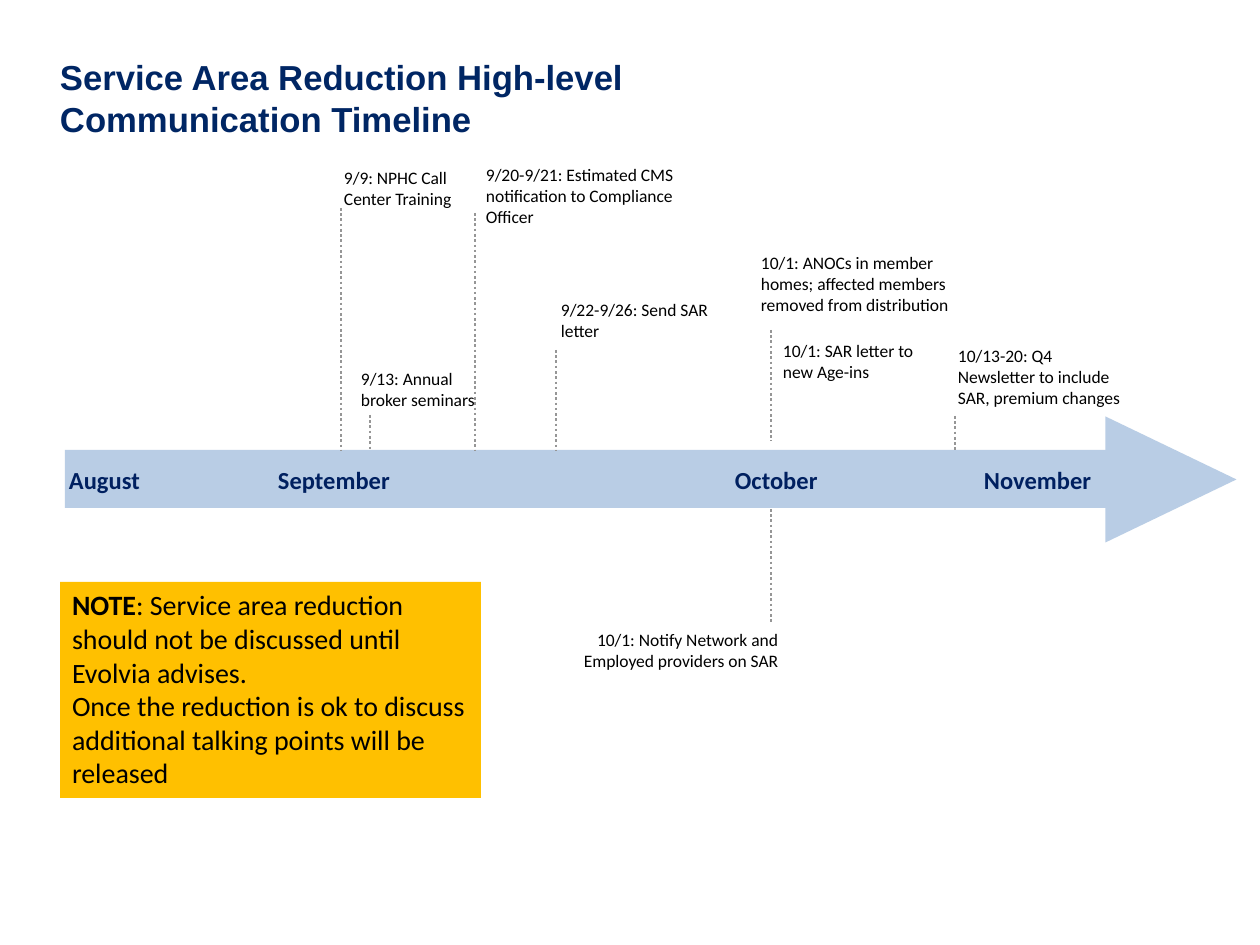
from dataclasses import dataclass

from lxml import etree
from pptx import Presentation, util as u
from pptx.dml.color import RGBColor
from pptx.enum import dml, shapes, text
from pptx.oxml import ns

EMU_PER_PX = 914400 // 126


@dataclass(frozen=True)
class Theme:
    title: RGBColor = RGBColor(0x00, 0x26, 0x64)
    month: RGBColor = RGBColor(0x00, 0x20, 0x60)
    body: RGBColor = RGBColor(0x00, 0x00, 0x00)
    arrow: RGBColor = RGBColor(0xB9, 0xCD, 0xE5)
    marker: RGBColor = RGBColor(0x96, 0x96, 0x96)
    note: RGBColor = RGBColor(0xFF, 0xC0, 0x00)
    heading_font: str = "Arial"
    body_font: str = "Calibri"
    title_size: float = 19.8
    title_leading: int = 24
    month_size: int = 14
    event_size: int = 10
    note_size: int = 16
    marker_width: float = 1.5


THEME = Theme()

# Month name and the left edge of its label
MONTHS = [("August", 69), ("September", 278), ("October", 735), ("November", 984)]

# Text, left, top, width, height of each event above the arrow
EVENTS_ABOVE = [
    ("9/9: NPHC Call Center Training", 331, 158, 146, 88),
    ("9/22-9/26: Send SAR letter", 548, 290, 212, 40),
    ("9/20-9/21: Estimated CMS notification to Compliance Officer", 473, 155, 213, 87),
    ("9/13: Annual broker seminars", 348, 359, 154, 66),
    ("10/1: ANOCs in member homes; affected members removed from distribution",
     748, 243, 229, 87),
    ("10/13-20: Q4 Newsletter to include SAR, premium changes", 945, 336, 189, 74),
    ("10/1: SAR letter to new Age-ins", 770, 331, 165, 87),
]
EVENT_BELOW = ("10/1: Notify Network and Employed providers on SAR", 539, 620, 252, 74)

# x, top, bottom of each dotted marker
MARKERS = [(341, 208, 450), (475, 213, 450), (556, 350, 450), (771, 330, 441),
           (771, 509, 622), (370, 415, 450), (955, 416, 450)]

NOTE = [
    [("NOTE", True),
     (": Service area reduction should not be discussed until Evolvia advises.", False)],
    [("Once the reduction is ok to discuss additional talking points will be released",
      False)],
]


def px(*lengths):
    return [u.Emu(length * EMU_PER_PX) for length in lengths]


def set_font(paragraph, name, size, color, bold=None):
    font = paragraph.font
    font.name, font.size, font.bold = name, u.Pt(size), bold
    font.color.rgb = color


def set_margins(frame, *insets):
    (frame.margin_left, frame.margin_top,
     frame.margin_right, frame.margin_bottom) = px(*insets)


def add_text(slide, content, box, insets=(0, 0, 0, 0)):
    """Add a wrapping text box and return its frame."""
    frame = slide.shapes.add_textbox(*px(*box)).text_frame
    frame.word_wrap = True
    set_margins(frame, *insets)
    frame.text = content
    return frame


def add_block(slide, preset, box, color):
    block = slide.shapes.add_shape(preset, *px(*box))
    block.shadow.inherit = False
    block.fill.solid()
    block.fill.fore_color.rgb = color
    block.line.fill.background()
    return block


def add_title(slide):
    title = add_text(slide, "Service Area Reduction High-level\vCommunication Timeline",
                     (60, 55, 1150, 90)).paragraphs[0]
    title.line_spacing = u.Pt(THEME.title_leading)
    set_font(title, THEME.heading_font, THEME.title_size, THEME.title, True)


def add_arrow(slide):
    add_block(slide, shapes.MSO_SHAPE.RECTANGLE, (65, 450, 1054, 58), THEME.arrow)
    head = add_block(slide, shapes.MSO_SHAPE.FLOWCHART_EXTRACT,
                     (1108, 414, 126, 131), THEME.arrow)
    head.rotation = 90


def add_months(slide):
    names, lefts = zip(*MONTHS)
    frame = add_text(slide, "\t".join(names), (lefts[0], 450, 1100, 59))
    frame.vertical_anchor = text.MSO_ANCHOR.MIDDLE
    months = frame.paragraphs[0]
    stops = etree.SubElement(months._p.get_or_add_pPr(), ns.qn("a:tabLst"))
    for left in lefts[1:]:
        etree.SubElement(stops, ns.qn("a:tab"),
                         pos=str((left - lefts[0]) * EMU_PER_PX), algn="l")
    set_font(months, THEME.body_font, THEME.month_size, THEME.month, True)


def add_marker(slide, x, top, bottom):
    marker = slide.shapes.add_connector(
        shapes.MSO_CONNECTOR.STRAIGHT, *px(x, top, x, bottom))
    marker.line.color.rgb = THEME.marker
    marker.line.width = u.Pt(THEME.marker_width)
    marker.line.dash_style = dml.MSO_LINE.ROUND_DOT
    etree.SubElement(marker._element.spPr, ns.qn("a:effectLst"))


def add_event(slide, label, *box, align=text.PP_ALIGN.LEFT):
    event = add_text(slide, label, box, (13, 9, 13, 6)).paragraphs[0]
    event.alignment = align
    set_font(event, THEME.body_font, THEME.event_size, THEME.body)


def add_note(slide):
    note = add_block(slide, shapes.MSO_SHAPE.RECTANGLE, (60, 582, 421, 216), THEME.note)
    frame = note.text_frame
    frame.word_wrap = True
    frame.vertical_anchor = text.MSO_ANCHOR.TOP
    set_margins(frame, 12, 6, 12, 6)
    for index, runs in enumerate(NOTE):
        paragraph = frame.add_paragraph() if index else frame.paragraphs[0]
        paragraph.alignment = text.PP_ALIGN.LEFT
        set_font(paragraph, THEME.body_font, THEME.note_size, THEME.body)
        for words, bold in runs:
            run = paragraph.add_run()
            run.text, run.font.bold = words, bold


def main():
    deck = Presentation()
    deck.slide_width, deck.slide_height = px(1260, 945)
    slide = deck.slides.add_slide(deck.slide_layouts[6])

    add_title(slide)

    # Timeline arrow with months
    add_arrow(slide)
    add_months(slide)

    # Dated events
    for marker in MARKERS:
        add_marker(slide, *marker)
    for event in EVENTS_ABOVE:
        add_event(slide, *event)
    add_event(slide, *EVENT_BELOW, align=text.PP_ALIGN.RIGHT)

    add_note(slide)
    deck.save("out.pptx")


if __name__ == "__main__":
    main()
